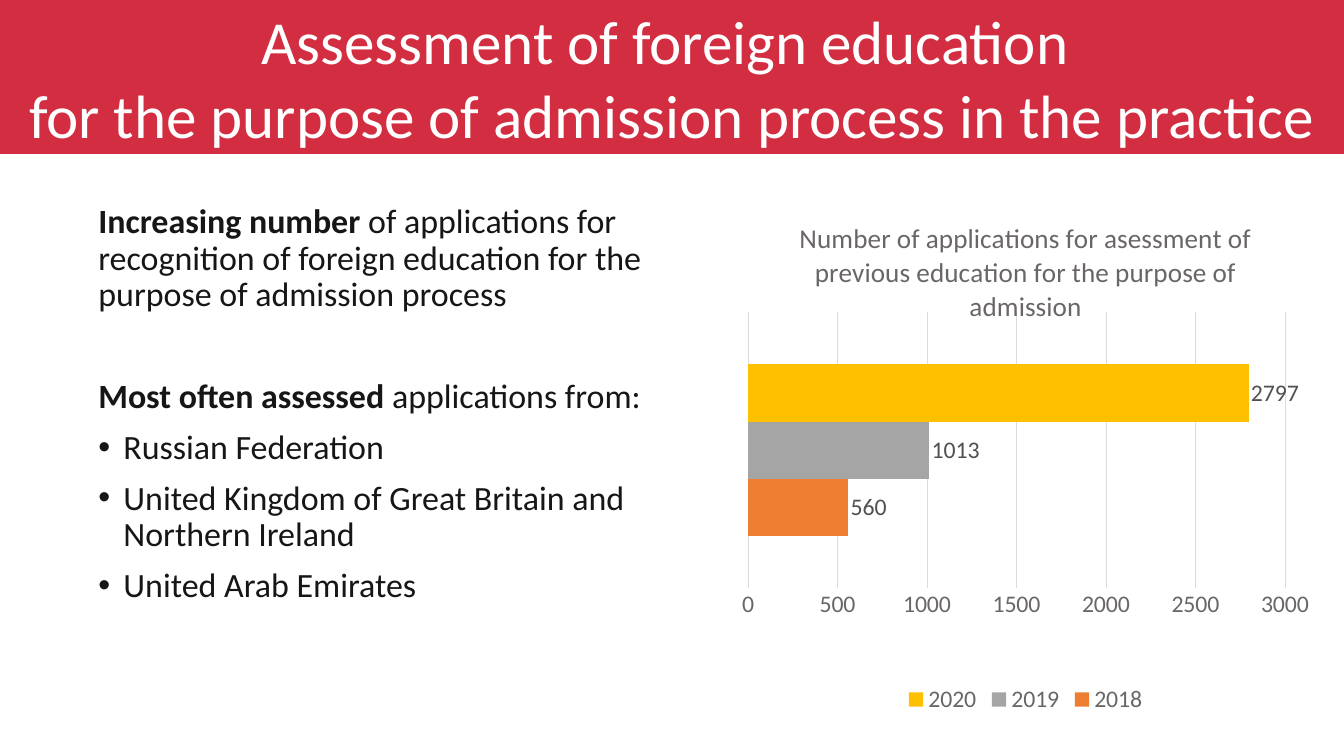
from lxml.etree import SubElement
from pptx import Presentation
from pptx.chart.data import CategoryChartData
from pptx.dml.color import RGBColor
from pptx.enum.chart import XL_CHART_TYPE, XL_LABEL_POSITION, XL_LEGEND_POSITION, XL_TICK_MARK
from pptx.enum.text import MSO_ANCHOR, MSO_AUTO_SIZE, PP_ALIGN
from pptx.oxml.ns import qn
from pptx.util import Inches, Pt

FONT = "Calibri"
RED = RGBColor(0xD2, 0x2D, 0x40)
WHITE = RGBColor(0xFF, 0xFF, 0xFF)
INK = RGBColor(0x17, 0x16, 0x16)
GREY_TEXT = RGBColor(0x6A, 0x66, 0x66)
LABEL_GREY = RGBColor(0x52, 0x4F, 0x4F)
GRID_GREY = RGBColor(0xDD, 0xDB, 0xDB)
ORANGE = RGBColor(0xED, 0x7D, 0x31)
GREY = RGBColor(0xA5, 0xA5, 0xA5)
YELLOW = RGBColor(0xFF, 0xC0, 0x00)

SLIDE_WIDTH, SLIDE_HEIGHT = 21.99, 12.37
TITLE_LINES = ["Assessment of foreign education ",
               "for the purpose of admission process in the practice"]
STATEMENTS = [
    ("Increasing number ", "of applications for recognition of foreign education "
     "for the purpose of admission process", 0),
    ("Most often assessed ", "applications from:", 77),
]
COUNTRIES = ["Russian Federation",
             "United Kingdom of Great Britain and Northern Ireland",
             "United Arab Emirates"]
CHART_TITLE = ("Number of applications for asessment of previous education "
               "for the purpose of admission")
APPLICATIONS = [("2018", 560, ORANGE), ("2019", 1013, GREY), ("2020", 2797, YELLOW)]


def style_font(font, size, color, bold=False):
    """Set the typeface, size, colour and weight of a font."""
    font.name, font.size, font.bold = FONT, Pt(size), bold
    font.color.rgb = color


def add_text(paragraph, text, size=40, color=INK, bold=False):
    """Append formatted text to a paragraph."""
    run = paragraph.add_run()
    run.text = text
    style_font(run.font, size, color, bold)


def next_paragraph(frame):
    """Return the empty first paragraph of a frame, or a new one."""
    first = frame.paragraphs[0]
    return frame.add_paragraph() if first.runs else first


def set_bullet(paragraph, indent=0.0):
    """Give a paragraph a hanging bullet, or none when the indent is zero."""
    properties = paragraph._p.get_or_add_pPr()
    properties.set("marL", str(Inches(indent)))
    properties.set("indent", str(-Inches(indent)))
    if indent:
        SubElement(properties, qn("a:buFont"), typeface="Arial")
        SubElement(properties, qn("a:buChar"), char="•")
    else:
        SubElement(properties, qn("a:buNone"))


def place(shape, left, top, width, height):
    """Move a shape to a box given in inches."""
    shape.left, shape.top = Inches(left), Inches(top)
    shape.width, shape.height = Inches(width), Inches(height)


def build_title(title, *box):
    """Fill the title band."""
    place(title, *box)
    title.fill.solid()
    title.fill.fore_color.rgb = RED
    frame = title.text_frame
    frame.auto_size = MSO_AUTO_SIZE.NONE
    frame.word_wrap = True
    frame.vertical_anchor = MSO_ANCHOR.MIDDLE
    for line in TITLE_LINES:
        paragraph = next_paragraph(frame)
        paragraph.alignment = PP_ALIGN.CENTER
        add_text(paragraph, line, size=72, color=WHITE)


def build_findings(body, *box):
    """Write the statements and the list of countries."""
    place(body, *box)
    frame = body.text_frame
    frame.auto_size = MSO_AUTO_SIZE.NONE
    frame.word_wrap = True
    for lead, rest, gap in STATEMENTS:
        paragraph = next_paragraph(frame)
        paragraph.line_spacing, paragraph.space_before = 0.9, Pt(gap)
        set_bullet(paragraph)
        add_text(paragraph, lead, bold=True)
        add_text(paragraph, rest)
    for country in COUNTRIES:
        paragraph = next_paragraph(frame)
        paragraph.line_spacing, paragraph.space_before = 0.9, Pt(16.5)
        set_bullet(paragraph, indent=0.41)
        add_text(paragraph, country)


def set_plot_area(chart, x, y, w, h):
    """Fix the inner plot area as fractions of the chart."""
    plot_area = chart._chartSpace.chart.plotArea
    layout = plot_area.find(qn("c:layout"))
    if layout is None:
        layout = SubElement(plot_area, qn("c:layout"))
        plot_area.insert(0, layout)
    manual = SubElement(layout, qn("c:manualLayout"))
    settings = [("layoutTarget", "inner"), ("xMode", "edge"), ("yMode", "edge"),
                ("x", x), ("y", y), ("w", w), ("h", h)]
    for tag, value in settings:
        SubElement(manual, qn(f"c:{tag}"), val=str(value))


def build_applications_chart(slide, *box):
    """Draw the bar chart of applications per year."""
    data = CategoryChartData()
    data.categories = ["1"]
    for year, count, _ in APPLICATIONS:
        data.add_series(year, [count])
    chart = slide.shapes.add_chart(
        XL_CHART_TYPE.BAR_CLUSTERED, *map(Inches, box), data).chart
    style_font(chart.font, 10, INK)
    set_plot_area(chart, 0.026, 0.215, 0.917, 0.533)

    chart.has_title = True
    add_text(chart.chart_title.text_frame.paragraphs[0], CHART_TITLE,
             size=32, color=GREY_TEXT)
    chart.chart_title.include_in_layout = False
    chart.has_legend = True
    chart.legend.position = XL_LEGEND_POSITION.BOTTOM
    chart.legend.include_in_layout = False
    style_font(chart.legend.font, 28, GREY_TEXT)

    chart.category_axis.visible = False
    counts = chart.value_axis
    counts.minimum_scale, counts.maximum_scale, counts.major_unit = 0, 3000, 500
    counts.major_tick_mark = counts.minor_tick_mark = XL_TICK_MARK.NONE
    counts.format.line.fill.background()
    counts.major_gridlines.format.line.color.rgb = GRID_GREY
    counts.major_gridlines.format.line.width = Pt(0.75)
    style_font(counts.tick_labels.font, 28, GREY_TEXT)

    plot = chart.plots[0]
    plot.gap_width, plot.overlap, plot.vary_by_categories = 182, 0, False
    for series, (_, _, color) in zip(plot.series, APPLICATIONS):
        series.format.fill.solid()
        series.format.fill.fore_color.rgb = color
        labels = series.data_labels
        labels.show_value = True
        labels.position = XL_LABEL_POSITION.OUTSIDE_END
        style_font(labels.font, 28, LABEL_GREY)


def main():
    """Build and save the slide."""
    presentation = Presentation()
    presentation.slide_width = Inches(SLIDE_WIDTH)
    presentation.slide_height = Inches(SLIDE_HEIGHT)
    slide = presentation.slides.add_slide(presentation.slide_layouts[1])
    build_title(slide.shapes.title, 0, 0, SLIDE_WIDTH, 2.52)
    build_findings(slide.placeholders[1], 1.51, 3.29, 9.34, 7.85)
    build_applications_chart(slide, 11.99, 3.29, 9.58, 8.47)
    presentation.save("out.pptx")


if __name__ == "__main__":
    main()
